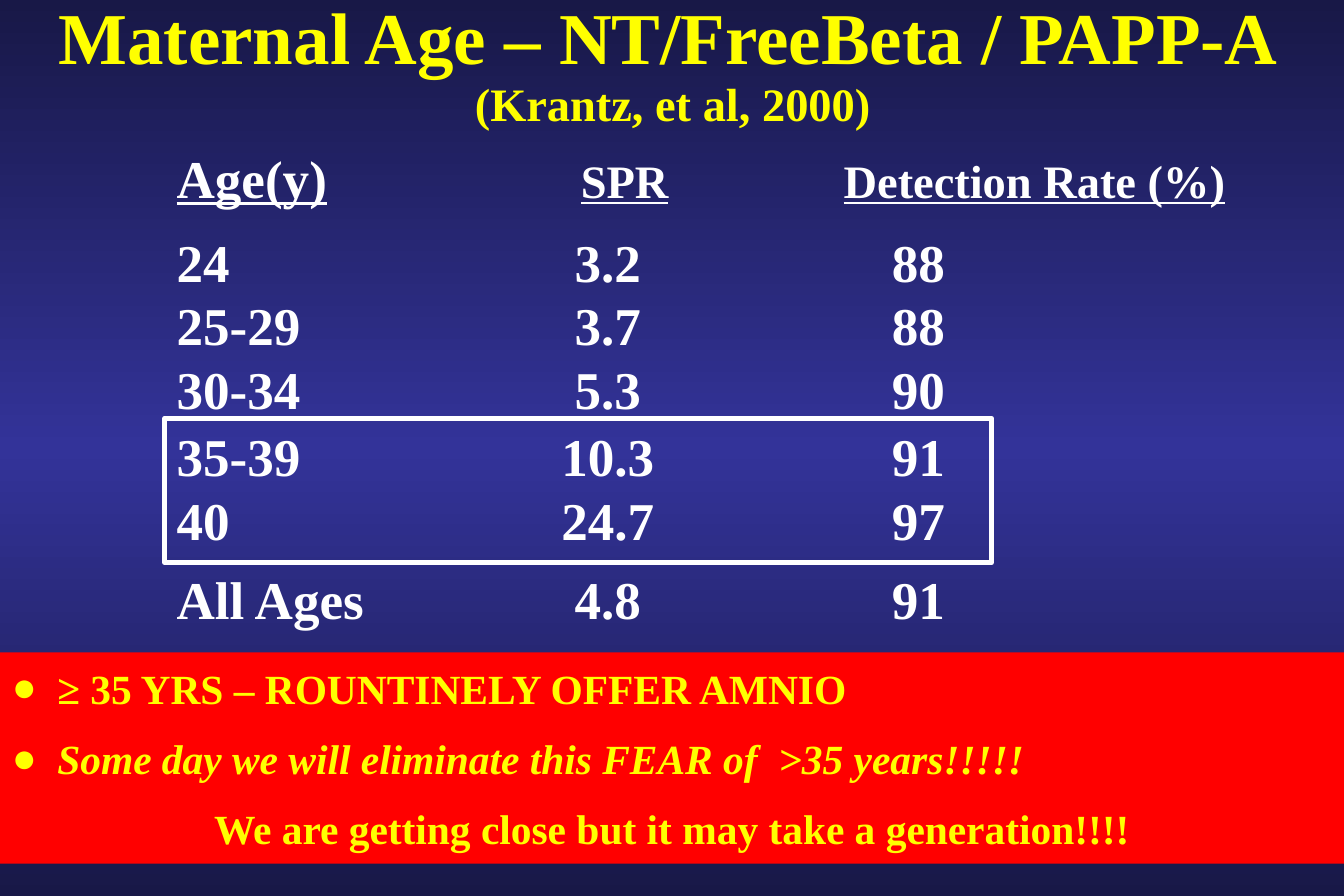
from lxml import etree
from copy import deepcopy
from pptx import Presentation
from pptx.dml.color import RGBColor
from pptx.enum.shapes import MSO_SHAPE
from pptx.enum.text import MSO_ANCHOR, MSO_AUTO_SIZE, PP_ALIGN
from pptx.oxml.ns import qn
from pptx.util import Inches, Pt

YELLOW = RGBColor(0xFF, 0xFF, 0x00)
WHITE = RGBColor(0xFF, 0xFF, 0xFF)
RED = RGBColor(0xFF, 0x00, 0x00)
NAVY = RGBColor(0x18, 0x18, 0x47)
BLUE = RGBColor(0x33, 0x33, 0x99)
LEFT, CENTER = PP_ALIGN.LEFT, PP_ALIGN.CENTER
TOP, MIDDLE = MSO_ANCHOR.TOP, MSO_ANCHOR.MIDDLE
FIXED = MSO_AUTO_SIZE.NONE
RECTANGLE = MSO_SHAPE.RECTANGLE
FONT = "Times New Roman"
LINE_HEIGHT = 1.196
HEADER_TABS = (3.75, 7.18)
VALUE_TABS = (3.61, 6.21)
YOUNGER_ROWS = [("24", "3.2", "88"), ("25-29", "3.7", "88"), ("30-34", "5.3", "90")]
OLDER_ROWS = [("35-39", "10.3", "91"), ("40", "24.7", "97")]
TOTAL_ROWS = [("All Ages", "4.8", "91")]


def prepare_frame(shape, anchor=TOP, wrap=True):
    """Set wrapping and anchoring of a shape and return its text frame."""
    frame = shape.text_frame
    frame.word_wrap = wrap
    frame.auto_size = FIXED
    frame.vertical_anchor = anchor
    return frame


def next_para(frame):
    """Return the empty first paragraph of a frame, or a new one."""
    first = frame.paragraphs[0]
    return frame.add_paragraph() if first.runs else first


def add_span(para, text, size=32, color=WHITE, italic=False, underline=False):
    """Add one formatted run to a paragraph."""
    span = para.add_run()
    span.text = text
    span.font.name = FONT
    span.font.size = Pt(size)
    span.font.bold = True
    span.font.italic = italic
    span.font.underline = underline
    span.font.color.rgb = color


def format_para(para, size=32, align=LEFT, before=0):
    """Set alignment, line height and space before."""
    para.alignment = align
    para.line_spacing = Pt(round(size * LINE_HEIGHT, 2))
    para.space_before = Pt(before)


def set_tabs(para, positions):
    """Give a paragraph centred tab stops, in inches."""
    stops = etree.SubElement(para._p.get_or_add_pPr(), qn("a:tabLst"))
    for position in positions:
        etree.SubElement(stops, qn("a:tab"), pos=str(Inches(position)), algn="ctr")


def set_bullet(para, symbol, indent):
    """Give a paragraph a hanging bullet, or none when symbol is empty."""
    properties = para._p.get_or_add_pPr()
    properties.set("marL", str(Inches(indent)))
    properties.set("indent", str(-Inches(indent)))
    if symbol:
        etree.SubElement(properties, qn("a:buChar"), char=symbol)
    else:
        etree.SubElement(properties, qn("a:buNone"))


def place(shape, box):
    """Move a shape to a box given in inches."""
    shape.left, shape.top, shape.width, shape.height = map(Inches, box)


def paint_background(page):
    """Fill the page with a vertical navy, blue, navy gradient."""
    fill = page.background.fill
    fill.gradient()
    fill.gradient_angle = 270
    stop_list = next(page._element.iter(qn("a:gsLst")))
    stop_list.append(deepcopy(stop_list[-1]))
    for stop, color, position in zip(fill.gradient_stops, (NAVY, BLUE, NAVY), (0, 0.5, 1)):
        stop.color.rgb = color
        stop.position = position


def add_heading(page, title_box, source_box):
    """Fill the title and put the study reference below it."""
    title = page.shapes.title
    source = page.shapes.add_textbox(0, 0, 0, 0)
    for shape, box, text, size, anchor, wrap in (
        (title, title_box, "Maternal Age – NT/FreeBeta / PAPP-A", 44, MIDDLE, True),
        (source, source_box, "(Krantz, et al, 2000)", 28, TOP, False),
    ):
        place(shape, box)
        para = next_para(prepare_frame(shape, anchor, wrap))
        format_para(para, size, CENTER)
        add_span(para, text, size, YELLOW)


def add_header(frame):
    """Write the underlined column heads."""
    para = next_para(frame)
    format_para(para, 36)
    set_tabs(para, HEADER_TABS)
    add_span(para, "Age(y)", underline=True)
    for label in ("SPR", "Detection Rate (%)"):
        add_span(para, "\t", 28)
        add_span(para, label, 28, underline=True)


def add_rows(page, box, rows, header=False, outlined=False):
    """Write rows of age, SPR and rate in a box, with optional heads or outline."""
    if outlined:
        shape = page.shapes.add_shape(RECTANGLE, *map(Inches, box))
        shape.shadow.inherit = False
        shape.fill.background()
        shape.line.color.rgb = WHITE
        shape.line.width = Pt(3)
    else:
        shape = page.shapes.add_textbox(*map(Inches, box))
    frame = prepare_frame(shape)
    if header:
        add_header(frame)
    for index, row in enumerate(rows):
        para = next_para(frame)
        format_para(para, before=12.5 if header and index == 0 else 0)
        set_tabs(para, VALUE_TABS)
        add_span(para, "\t".join(row))


def add_conclusions(page, box):
    """Fill the body with the closing remarks on red."""
    body = page.placeholders[1]
    place(body, box)
    body.fill.solid()
    body.fill.fore_color.rgb = RED
    frame = prepare_frame(body, MIDDLE)
    for text, symbol, align, italic, before in (
        ("≥ 35 YRS – ROUNTINELY OFFER AMNIO", "●", LEFT, False, 0),
        ("Some day we will eliminate this FEAR of  >35 years!!!!!", "●", LEFT, True, 12.5),
        ("We are getting close but it may take a generation!!!!", "", CENTER, False, 12.5),
    ):
        para = next_para(frame)
        format_para(para, 25, align, before)
        set_bullet(para, symbol, 0.38 if symbol else 0)
        add_span(para, text, 25, YELLOW, italic)


def main():
    """Build the slide and save the deck."""
    deck = Presentation()
    deck.slide_width, deck.slide_height = Inches(11.25), Inches(7.5)
    page = deck.slides.add_slide(deck.slide_layouts[1])
    paint_background(page)
    add_heading(page, (0.12, -0.33, 10.96, 1.25), (3.87, 0.58, 3.52, 0.57))
    add_conclusions(page, (0, 5.46, 11.25, 1.77))
    add_rows(page, (1.38, 1.1, 9.07, 2.5), YOUNGER_ROWS, header=True)
    add_rows(page, (1.38, 3.5, 6.92, 1.21), OLDER_ROWS, outlined=True)
    add_rows(page, (1.38, 4.69, 6.92, 0.64), TOTAL_ROWS)
    deck.save("out.pptx")


if __name__ == "__main__":
    main()
